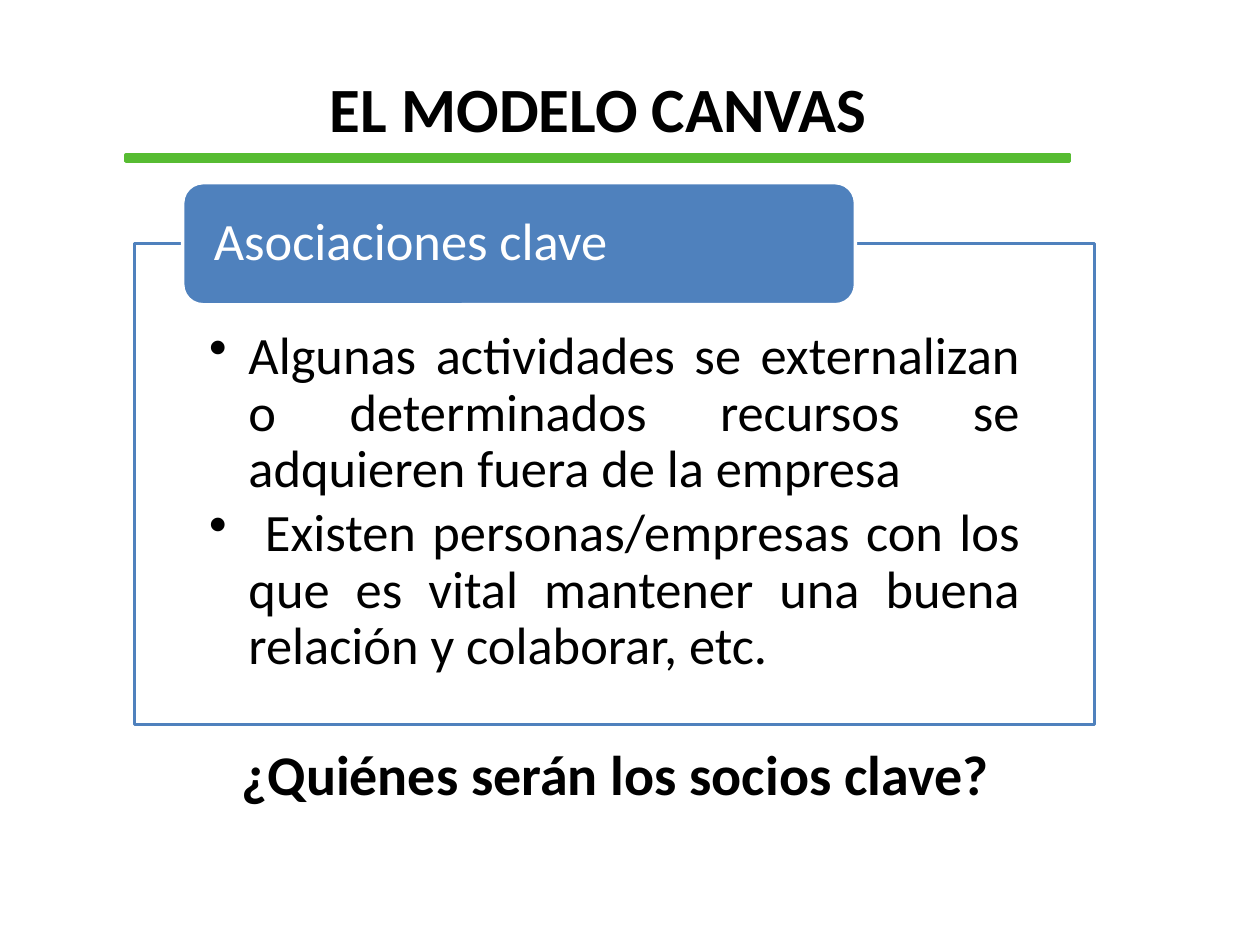
import pptx
import pptx.util
import pptx.dml.color
import pptx.enum.shapes
import pptx.enum.text
import pptx.oxml.ns
import lxml.etree

Pt = pptx.util.Pt
Kind = pptx.enum.shapes.MSO_SHAPE
Align = pptx.enum.text.PP_ALIGN
Anchor = pptx.enum.text.MSO_ANCHOR

TITLE = "EL MODELO CANVAS"
HEAD = "Asociaciones clave"
POINTS = [
    "Algunas actividades se externalizan o determinados recursos se adquieren fuera de la empresa",
    " Existen personas/empresas con los que es vital mantener una buena relación y colaborar, etc.",
]
ASK = "¿Quiénes serán los socios clave?"

GREEN, BLUE, WHITE, BLACK = "57BC32", "4F81BD", "FFFFFF", "000000"
PAD = (7.2, 3.6, 7.2, 3.6)


def tint(code):
    return pptx.dml.color.RGBColor.from_string(code)


def block(slide, kind, box, fill, line):
    shape = slide.shapes.add_shape(kind, *map(Pt, box))
    shape.shadow.inherit = False
    shape.fill.solid()
    shape.fill.fore_color.rgb = tint(fill)
    shape.line.color.rgb = tint(line)
    shape.line.width = Pt(2)
    return shape


def bullet(para):
    props = para._p.get_or_add_pPr()
    props.set("marL", str(Pt(22.5)))
    props.set("indent", str(-Pt(22.5)))
    mark = lxml.etree.SubElement(props, pptx.oxml.ns.qn("a:buChar"))
    mark.set("char", "•")


def write(shape, lines, size, color=BLACK, align=Align.CENTER, bold=False,
          pad=PAD, anchor=Anchor.TOP, dots=False, space=None, after=None):
    frame = shape.text_frame
    frame.word_wrap = True
    frame.vertical_anchor = anchor
    (frame.margin_left, frame.margin_top,
     frame.margin_right, frame.margin_bottom) = map(Pt, pad)
    for i, line in enumerate(lines):
        para = frame.add_paragraph() if i else frame.paragraphs[0]
        para.text = line
        para.alignment = align
        if space:
            para.line_spacing = space
        if after:
            para.space_after = Pt(after)
        if dots:
            bullet(para)
        font = para.font
        font.name = "Calibri"
        font.size = Pt(size)
        font.bold = bold
        font.color.rgb = tint(color)


def label(slide, box, text, size):
    shape = slide.shapes.add_textbox(*map(Pt, box))
    write(shape, [text], size, bold=True)


def main():
    deck = pptx.Presentation()
    deck.slide_width, deck.slide_height = Pt(720), Pt(540)
    slide = deck.slides.add_slide(deck.slide_layouts[6])

    block(slide, Kind.RECTANGLE, (72, 88.6, 539.3, 3.6), GREEN, GREEN)
    label(slide, (162, 36, 360, 51), TITLE, 36)

    panel = block(slide, Kind.RECTANGLE, (77, 139, 548.6, 275), WHITE, BLUE)
    write(panel, POINTS, 30, align=Align.JUSTIFY, pad=(42.5, 49, 42.5, 16.5),
          dots=True, space=0.9, after=4)

    tab = block(slide, Kind.ROUNDED_RECTANGLE, (104.4, 104.4, 384.5, 69.8), BLUE, WHITE)
    write(tab, [HEAD], 30, WHITE, Align.LEFT, pad=(14.4, 0, 14.4, 0),
          anchor=Anchor.MIDDLE, space=0.9)

    label(slide, (77.8, 419, 548, 46), ASK, 32)
    deck.save("out.pptx")


if __name__ == "__main__":
    main()
